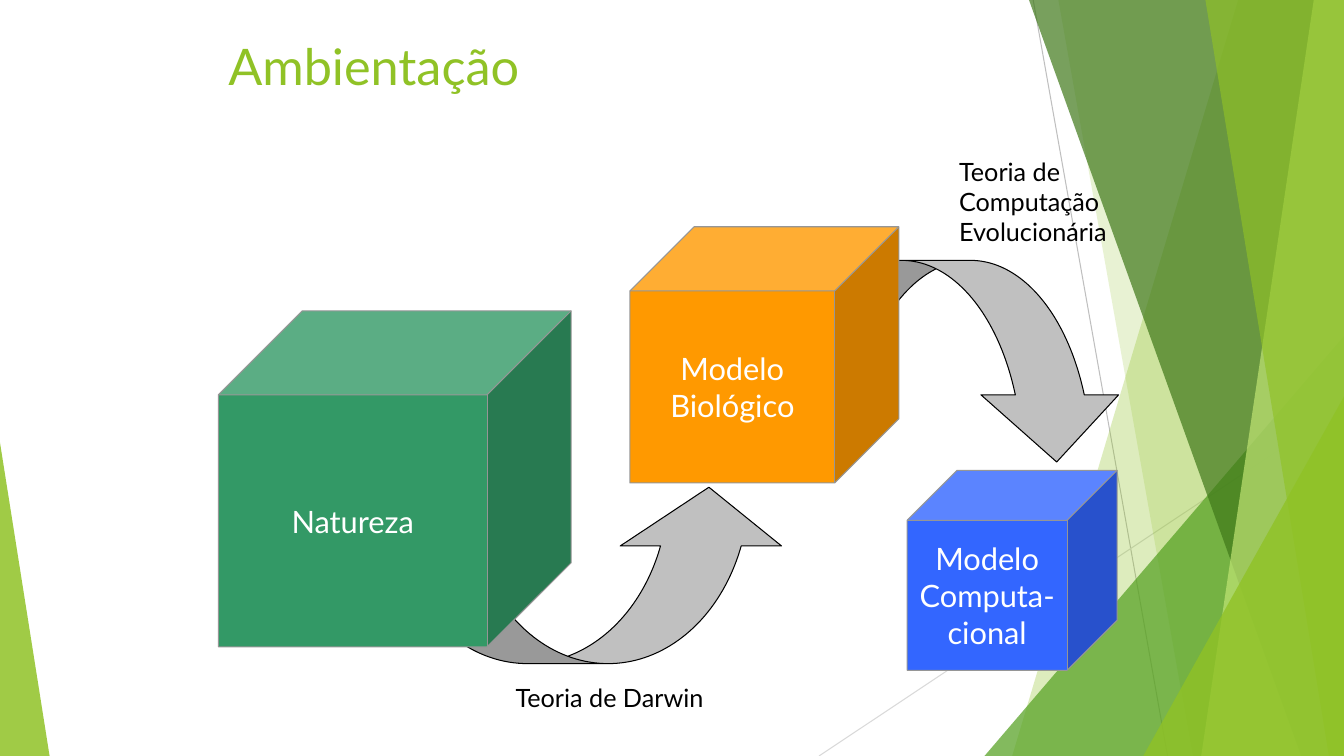
"""Build the Ambientação slide: three cubes joined by curved arrows over green facets."""
from dataclasses import dataclass

from lxml.etree import SubElement
from pptx import Presentation
from pptx.dml.color import RGBColor
from pptx.enum.shapes import MSO_AUTO_SHAPE_TYPE as Preset, MSO_CONNECTOR as Connector
from pptx.enum.text import MSO_ANCHOR as Anchor, MSO_AUTO_SIZE as AutoSize, PP_ALIGN as Align
from pptx.oxml.ns import qn
from pptx.shapes.autoshape import Shape
from pptx.slide import Slide
from pptx.text.text import TextFrame
from pptx.util import Inches, Pt

COLUMNS, ROWS = 160, 90
WIDTH, HEIGHT = Inches(13.33), Inches(7.5)


@dataclass(frozen=True)
class Theme:
    font: str = "Lato"
    title_size: int = 36
    cube_size: int = 22
    label_size: int = 18
    line_width: float = 0.75
    lime: str = "90C226"
    pale_lime: str = "C0E474"
    leaf: str = "54A021"
    moss: str = "3F7819"
    white: str = "FFFFFF"
    black: str = "000000"
    silver: str = "C0C0C0"
    cube_edge: str = "969696"
    green: str = "339966"
    orange: str = "FF9900"
    blue: str = "3366FF"


THEME = Theme()


@dataclass(frozen=True)
class Box:
    column: float
    row: float
    columns: float
    rows: float

    def place(self) -> tuple[int, int, int, int]:
        """Return left, top, width and height in slide units."""
        return across(self.column), down(self.row), across(self.columns), down(self.rows)


@dataclass(frozen=True)
class Ray:
    start: tuple[float, float]
    end: tuple[float, float]
    color: str


@dataclass(frozen=True)
class Facet:
    top_column: float
    bottom_column: float
    color: str
    opacity: int


@dataclass(frozen=True)
class Wedge:
    box: Box
    apex: float
    color: str
    opacity: int


@dataclass(frozen=True)
class Cube:
    box: Box
    color: str
    lines: tuple[str, ...]


@dataclass(frozen=True)
class Arrow:
    box: Box
    preset: Preset
    adjustments: tuple[float, float, float]


@dataclass(frozen=True)
class Label:
    box: Box
    text: str
    size: int
    color: str
    wraps: bool
    grows: bool


RAYS = (
    Ray((123, 0), (139, 90), "BFBFBF"),
    Ray((160, 48.4), (97.5, 90), "D9D9D9"),
)
BACKDROP = (
    Facet(147.4, 120.5, THEME.lime, 30),
    Facet(126, 142, THEME.lime, 20),
    Wedge(Box(117.2, 40, 42.8, 50), 1, THEME.leaf, 72),
    Facet(122.5, 154.9, THEME.moss, 70),
    Facet(156.4, 143, THEME.pale_lime, 70),
    Facet(143.5, 158.2, THEME.lime, 65),
    Wedge(Box(136.1, 47.2, 23.9, 42.8), 1, THEME.lime, 80),
    Wedge(Box(0, 52.7, 5.9, 37.3), 0, THEME.lime, 85),
)
MODELS = (
    Cube(Box(108, 56, 25, 23.8), THEME.blue, ("Modelo", "Computa-", "cional")),
    Arrow(Box(46, 58, 48, 21), Preset.CURVED_UP_ARROW, (0.457, 0.914, 0.333)),
    Cube(Box(26, 37, 42, 40), THEME.green, ("Natureza",)),
    Arrow(Box(93, 31, 41, 24), Preset.CURVED_DOWN_ARROW, (0.342, 0.683, 0.333)),
    Cube(Box(75, 27, 32, 30.5), THEME.orange, ("Modelo", "Biológico")),
)
TITLE = Label(Box(26, 3.6, 108, 15), "Ambientação", THEME.title_size, THEME.lime, True, False)
LABELS = (
    Label(Box(60.2, 80.6, 25.1, 4.8), "Teoria de Darwin",
          THEME.label_size, THEME.black, False, True),
    Label(Box(113, 18, 24.7, 12), "Teoria de Computação Evolucionária",
          THEME.label_size, THEME.black, True, True),
)


def across(columns: float) -> int:
    """Convert grid columns to a length."""
    return round(WIDTH * columns / COLUMNS)


def down(rows: float) -> int:
    """Convert grid rows to a length."""
    return round(HEIGHT * rows / ROWS)


def paint(shape: Shape, color: str, line: str | None = None, opacity: int = 100) -> None:
    """Set the fill, outline and opacity of a shape."""
    shape.shadow.inherit = False
    shape.fill.solid()
    shape.fill.fore_color.rgb = RGBColor.from_string(color)
    if opacity < 100:
        fill_color = shape.element.spPr.find(qn("a:solidFill"))[0]
        SubElement(fill_color, qn("a:alpha")).set("val", str(opacity * 1000))
    if line is None:
        shape.line.fill.background()
    else:
        shape.line.color.rgb = RGBColor.from_string(line)
        shape.line.width = Pt(THEME.line_width)


def write(frame: TextFrame, lines: tuple[str, ...], size: int, color: str, align: Align) -> None:
    """Write one paragraph with one run for each line."""
    for index, line in enumerate(lines):
        paragraph = frame.add_paragraph() if index else frame.paragraphs[0]
        paragraph.alignment = align
        run = paragraph.add_run()
        run.text = line
        run.font.name = THEME.font
        run.font.size = Pt(size)
        run.font.color.rgb = RGBColor.from_string(color)


def draw_ray(slide: Slide, ray: Ray) -> None:
    """Draw a thin background line."""
    (left, top), (right, bottom) = ray.start, ray.end
    connector = slide.shapes.add_connector(
        Connector.STRAIGHT, across(left), down(top), across(right), down(bottom))
    connector.line.color.rgb = RGBColor.from_string(ray.color)
    connector.line.width = Pt(THEME.line_width)
    SubElement(connector.element.spPr, qn("a:effectLst"))


def draw_panel(slide: Slide, panel: Facet | Wedge) -> None:
    """Draw a translucent facet or wedge of the backdrop."""
    if isinstance(panel, Wedge):
        shape = slide.shapes.add_shape(Preset.ISOSCELES_TRIANGLE, *panel.box.place())
        shape.adjustments[0] = panel.apex
    else:
        builder = slide.shapes.build_freeform(across(panel.top_column), 0)
        builder.add_line_segments(
            [(WIDTH, 0), (WIDTH, HEIGHT), (across(panel.bottom_column), HEIGHT)])
        shape = builder.convert_to_shape()
    paint(shape, panel.color, opacity=panel.opacity)


def draw_model(slide: Slide, model: Cube | Arrow) -> None:
    """Draw a captioned cube or a curved arrow."""
    if isinstance(model, Arrow):
        shape = slide.shapes.add_shape(model.preset, *model.box.place())
        for index, value in enumerate(model.adjustments):
            shape.adjustments[index] = value
        paint(shape, THEME.silver, THEME.black)
        return
    shape = slide.shapes.add_shape(Preset.CUBE, *model.box.place())
    paint(shape, model.color, THEME.cube_edge)
    shape.text_frame.word_wrap = False
    shape.text_frame.vertical_anchor = Anchor.MIDDLE
    write(shape.text_frame, model.lines, THEME.cube_size, THEME.white, Align.CENTER)


def draw_label(slide: Slide, label: Label) -> None:
    """Draw a free-standing text."""
    frame = slide.shapes.add_textbox(*label.box.place()).text_frame
    frame.word_wrap = label.wraps
    frame.auto_size = AutoSize.SHAPE_TO_FIT_TEXT if label.grows else AutoSize.NONE
    write(frame, (label.text,), label.size, label.color, Align.LEFT)


def main() -> None:
    """Build and save the presentation."""
    presentation = Presentation()
    presentation.slide_width, presentation.slide_height = WIDTH, HEIGHT
    slide = presentation.slides.add_slide(presentation.slide_layouts[6])
    for ray in RAYS:
        draw_ray(slide, ray)
    for panel in BACKDROP:
        draw_panel(slide, panel)
    draw_label(slide, TITLE)
    for model in MODELS:
        draw_model(slide, model)
    for label in LABELS:
        draw_label(slide, label)
    presentation.save("out.pptx")


if __name__ == "__main__":
    main()
